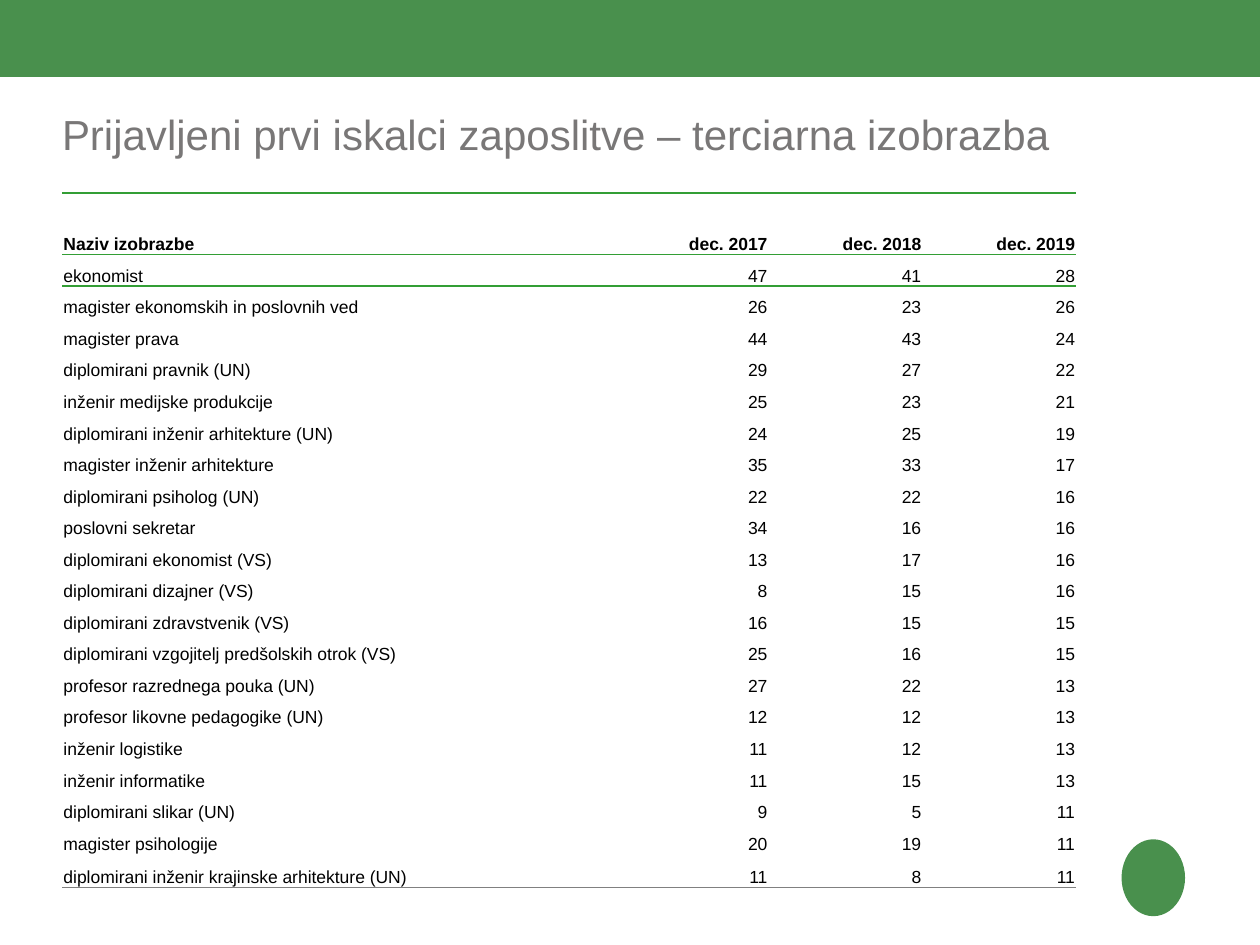
"""Builds a slide with a table of first-time job seekers by tertiary education."""
from lxml import etree
from pptx import Presentation
from pptx import util as u
from pptx.dml.color import RGBColor
from pptx.enum import shapes, text
from pptx.oxml.ns import qn

TITLE = "Prijavljeni prvi iskalci zaposlitve – terciarna izobrazba"
HEADER = ("Naziv izobrazbe", "dec. 2017", "dec. 2018", "dec. 2019")
SEEKERS = [
    ("ekonomist", 47, 41, 28),
    ("magister ekonomskih in poslovnih ved", 26, 23, 26),
    ("magister prava", 44, 43, 24),
    ("diplomirani pravnik (UN)", 29, 27, 22),
    ("inženir medijske produkcije", 25, 23, 21),
    ("diplomirani inženir arhitekture (UN)", 24, 25, 19),
    ("magister inženir arhitekture", 35, 33, 17),
    ("diplomirani psiholog (UN)", 22, 22, 16),
    ("poslovni sekretar", 34, 16, 16),
    ("diplomirani ekonomist (VS)", 13, 17, 16),
    ("diplomirani dizajner (VS)", 8, 15, 16),
    ("diplomirani zdravstvenik (VS)", 16, 15, 15),
    ("diplomirani vzgojitelj predšolskih otrok (VS)", 25, 16, 15),
    ("profesor razrednega pouka (UN)", 27, 22, 13),
    ("profesor likovne pedagogike (UN)", 12, 12, 13),
    ("inženir logistike", 11, 12, 13),
    ("inženir informatike", 11, 15, 13),
    ("diplomirani slikar (UN)", 9, 5, 11),
    ("magister psihologije", 20, 19, 11),
    ("diplomirani inženir krajinske arhitekture (UN)", 11, 8, 11),
]
BAND, RULE, GREY, TITLE_GREY, BLACK = "49904D", "339E35", "808080", "797777", "000000"
LEFT, TABLE_TOP, TABLE_WIDTH, TABLE_HEIGHT = 1.25, 3.89, 20.45, 14.02
YEAR_WIDTH, HEADER_HEIGHT, LAST_HEIGHT = 3.1, 1.24, 0.68
NO_STYLE = "{2D5ABB26-0587-4C30-8999-92F81FD0307C}"


def paint(color_format, color):
    color_format.rgb = RGBColor.from_string(color)


def format_text(para, size, color, bold=False):
    for span in para.runs:
        span.font.name, span.font.size, span.font.bold = "Arial", u.Pt(size), bold
        paint(span.font.color, color)


def add_block(slide, kind, *place):
    block = slide.shapes.add_shape(kind, *map(u.Cm, place))
    block.shadow.inherit = False
    block.fill.solid()
    paint(block.fill.fore_color, BAND)
    block.line.fill.background()


def add_borders(cell, borders):
    properties = cell._tc.get_or_add_tcPr()
    for index, (side, color) in enumerate(borders):
        line = etree.Element(qn(f"a:{side}"), w=str(u.Pt(1)))
        fill = etree.SubElement(line, qn("a:solidFill"))
        etree.SubElement(fill, qn("a:srgbClr"), val=color)
        properties.insert(index, line)


def add_title(slide):
    box = slide.shapes.title
    box.left, box.top, box.width, box.height = map(u.Cm, (LEFT, 2.08, 23.52, 1.8))
    frame = box.text_frame
    frame.text = TITLE
    frame.word_wrap = True
    frame.auto_size = text.MSO_AUTO_SIZE.NONE
    frame.vertical_anchor = text.MSO_ANCHOR.TOP
    frame.margin_left = frame.margin_right = frame.margin_top = frame.margin_bottom = 0
    para = frame.paragraphs[0]
    para.alignment, para.line_spacing = text.PP_ALIGN.LEFT, 1.1
    format_text(para, 24, TITLE_GREY)


def add_seekers_table(slide):
    rows = [HEADER, *SEEKERS]
    last = len(rows) - 1
    place = map(u.Cm, (LEFT, TABLE_TOP, TABLE_WIDTH, TABLE_HEIGHT))
    frame = slide.shapes.add_table(len(rows), len(HEADER), *place)
    table = frame.table
    table.first_row = table.horz_banding = False
    table._tbl.tblPr.find(qn("a:tableStyleId")).text = NO_STYLE

    years = len(HEADER) - 1
    widths = [TABLE_WIDTH - years * YEAR_WIDTH] + [YEAR_WIDTH] * years
    for column, width in zip(table.columns, widths):
        column.width = u.Cm(width)
    row_height = (TABLE_HEIGHT - HEADER_HEIGHT - LAST_HEIGHT) / (last - 1)
    heights = [HEADER_HEIGHT] + [row_height] * (last - 1) + [LAST_HEIGHT]
    for row, height in zip(table.rows, heights):
        row.height = u.Cm(height)

    borders = {0: [("lnT", RULE), ("lnB", RULE)], 1: [("lnT", RULE)], last: [("lnB", GREY)]}
    for row_index, values in enumerate(rows):
        for column_index, value in enumerate(values):
            cell = table.cell(row_index, column_index)
            cell.margin_left = cell.margin_right = cell.margin_top = u.Cm(0.03)
            cell.margin_bottom = 0
            cell.vertical_anchor = text.MSO_ANCHOR.BOTTOM
            cell.fill.background()
            add_borders(cell, borders.get(row_index, []))
            para = cell.text_frame.paragraphs[0]
            para.text = str(value)
            para.alignment = text.PP_ALIGN.RIGHT if column_index else text.PP_ALIGN.LEFT
            format_text(para, 10, BLACK, bold=row_index == 0)


def main():
    deck = Presentation()
    deck.slide_width, deck.slide_height = u.Cm(25.4), u.Cm(19.05)
    slide = deck.slides.add_slide(deck.slide_layouts[5])
    add_block(slide, shapes.MSO_SHAPE.RECTANGLE, 0, -0.03, 25.4, 1.58)
    add_block(slide, shapes.MSO_SHAPE.OVAL, 22.61, 16.92, 1.28, 1.55)
    add_title(slide)
    add_seekers_table(slide)
    deck.save("out.pptx")


if __name__ == "__main__":
    main()
